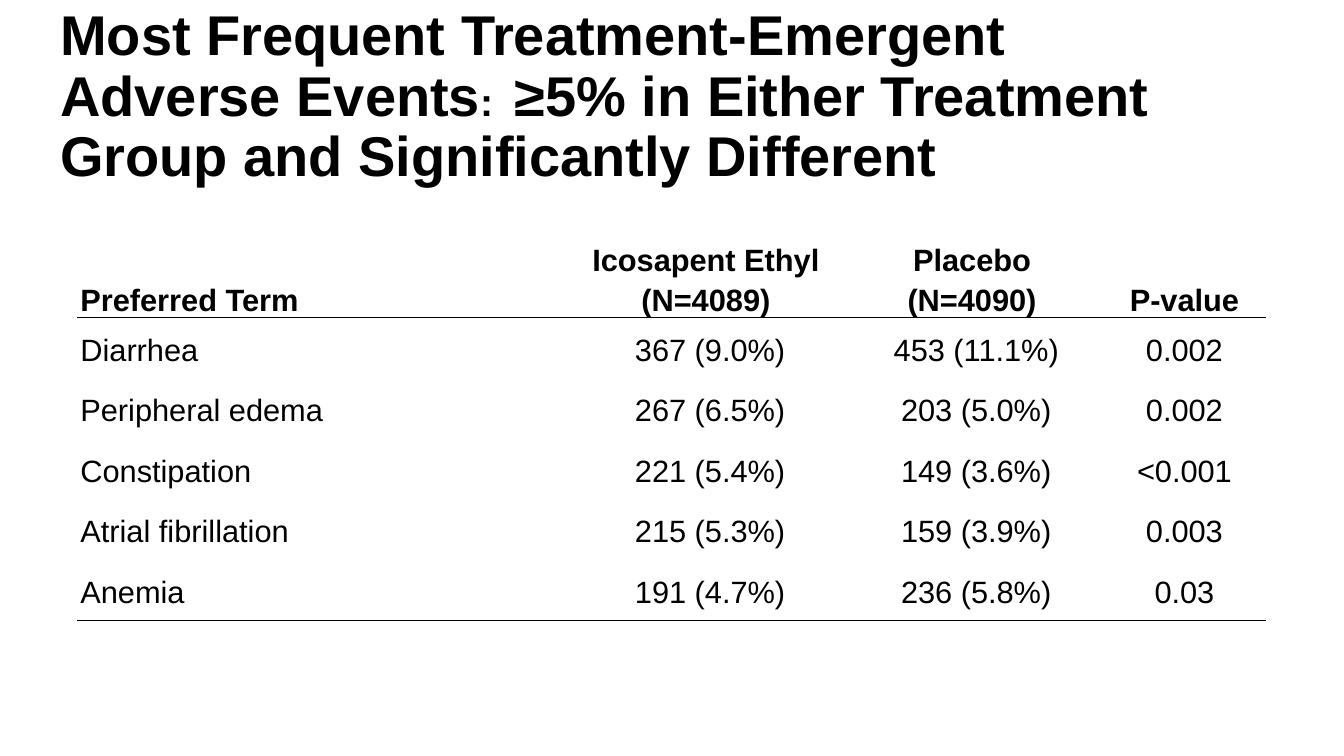
from lxml import etree
from pptx import Presentation
from pptx.dml.color import RGBColor
from pptx.enum import text
from pptx.oxml.ns import qn
from pptx.util import Pt

TITLE = [
    ("Most Frequent Treatment-Emergent Adverse Events", "title"),
    (":", "colon"),
    (" ≥5% in Either Treatment Group and Significantly Different", "title"),
]
EVENTS = [
    ("Preferred Term", "Icosapent Ethyl\n(N=4089)", "Placebo\n(N=4090)", "P-value"),
    ("Diarrhea", " 367 (9.0%)", " 453 (11.1%)", "0.002"),
    ("Peripheral edema", " 267 (6.5%)", " 203 (5.0%)", "0.002"),
    ("Constipation", " 221 (5.4%)", " 149 (3.6%)", "<0.001"),
    ("Atrial fibrillation", " 215 (5.3%)", " 159 (3.9%)", "0.003"),
    ("Anemia", " 191 (4.7%)", " 236 (5.8%)", "0.03"),
]
THEME = {
    "font": "Arial",
    "ink": "000000",
    "paper": "FFFFFF",
    "size": {"title": 40, "colon": 28, "table": 22},
    "colon_tracking": 4.4,
    "rule": 1,
}
TITLE_BOX = (36, 1.5, 835, 137)
TABLE_LEFT, TABLE_TOP = 55.2, 166.3
COLUMN_WIDTHS = (352.2, 193.7, 186.5, 117)
ROW_HEIGHTS = [52.5] + [43.2] * (len(EVENTS) - 1)
RULED_ROWS = (0, len(EVENTS) - 1)
NO_STYLE_NO_GRID = "{2D5ABB26-0587-4C30-8999-92F81FD0307C}"


def style_run(r, size, bold):
    r.font.name = THEME["font"]
    r.font.size = Pt(THEME["size"][size])
    r.font.bold = bold
    r.font.color.rgb = RGBColor.from_string(THEME["ink"])


def rule_below(cell):
    line = etree.Element(qn("a:lnB"), w=str(Pt(THEME["rule"])))
    fill = etree.SubElement(line, qn("a:solidFill"))
    etree.SubElement(fill, qn("a:srgbClr"), val=THEME["ink"])
    cell._tc.get_or_add_tcPr().insert(0, line)


def add_title(slide):
    tf = slide.shapes.add_textbox(*map(Pt, TITLE_BOX)).text_frame
    tf.word_wrap = True
    tf.vertical_anchor = text.MSO_ANCHOR.MIDDLE
    p = tf.paragraphs[0]
    p.line_spacing = 0.9
    for words, size in TITLE:
        r = p.add_run()
        r.text = words
        style_run(r, size, True)
        if size == "colon":
            r._r.get_or_add_rPr().set("spc", str(round(THEME["colon_tracking"] * 100)))


def fill_cell(cell, words, header, centred):
    cell.fill.solid()
    cell.fill.fore_color.rgb = RGBColor.from_string(THEME["paper"])
    cell.margin_left = cell.margin_right = Pt(2.25)
    cell.margin_top = cell.margin_bottom = 0
    cell.vertical_anchor = text.MSO_ANCHOR.BOTTOM if header else text.MSO_ANCHOR.MIDDLE
    p = cell.text_frame.paragraphs[0]
    p.text = words
    p.alignment = text.PP_ALIGN.CENTER if centred else text.PP_ALIGN.LEFT
    p.line_spacing = 1.15
    p.space_after = Pt(3)
    for r in p.runs:
        style_run(r, "table", header)


def add_event_table(slide):
    box = (TABLE_LEFT, TABLE_TOP, sum(COLUMN_WIDTHS), sum(ROW_HEIGHTS))
    table = slide.shapes.add_table(len(EVENTS), len(COLUMN_WIDTHS), *map(Pt, box)).table
    table._tbl.tblPr.find(qn("a:tableStyleId")).text = NO_STYLE_NO_GRID
    table.horz_banding = False
    for column, width in zip(table.columns, COLUMN_WIDTHS):
        column.width = Pt(width)
    for row, height in zip(table.rows, ROW_HEIGHTS):
        row.height = Pt(height)

    for i, event in enumerate(EVENTS):
        for j, words in enumerate(event):
            cell = table.cell(i, j)
            fill_cell(cell, words, header=i == 0, centred=j > 0)
            if i in RULED_ROWS:
                rule_below(cell)


def main():
    prs = Presentation()
    prs.slide_width, prs.slide_height = Pt(960), Pt(540)
    slide = prs.slides.add_slide(prs.slide_layouts[6])
    add_title(slide)
    add_event_table(slide)
    prs.save("out.pptx")


if __name__ == "__main__":
    main()
